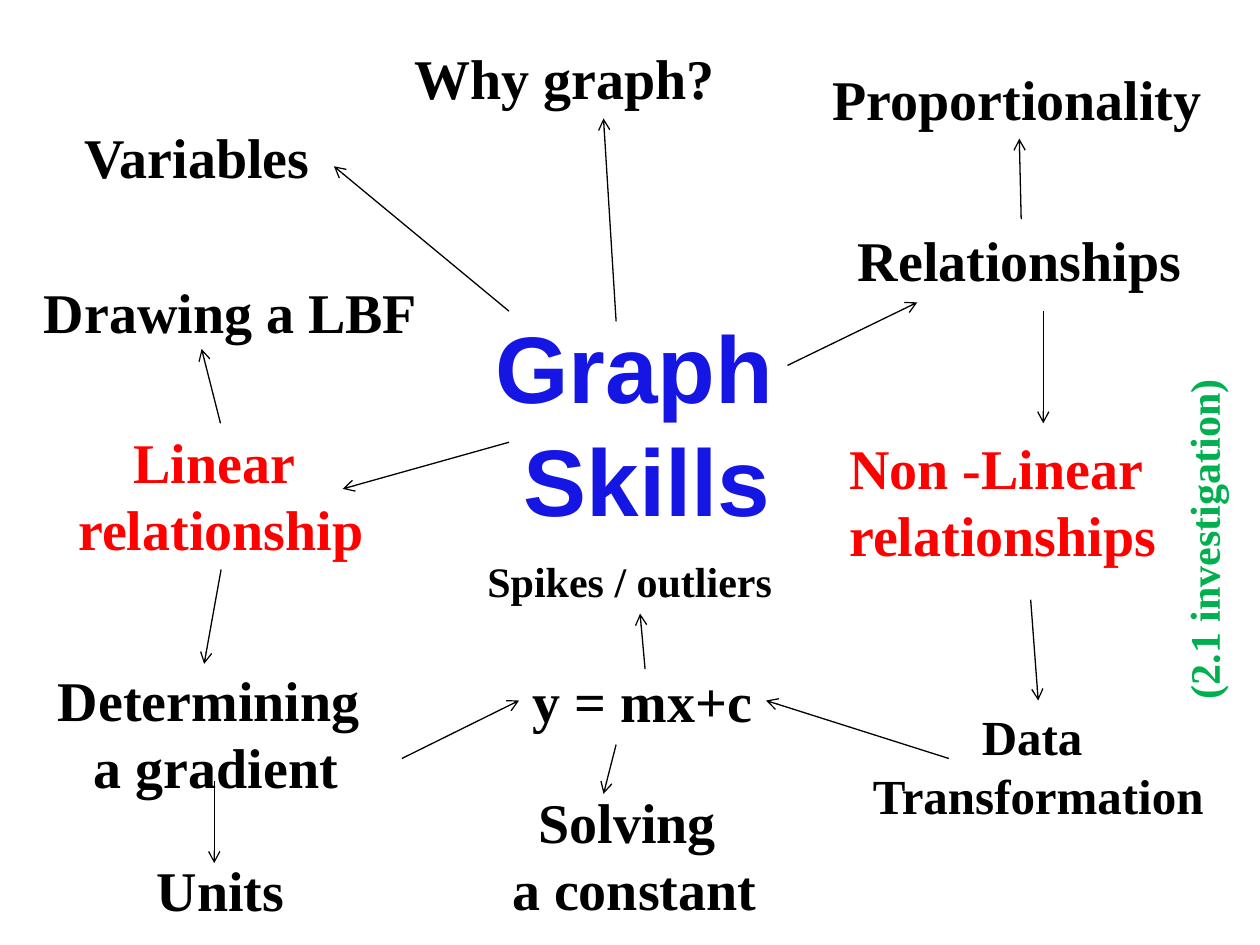
from pptx import Presentation
from pptx.dml.color import RGBColor
from pptx.enum import shapes, text
from pptx.oxml.ns import qn
from pptx.util import Inches, Pt
from lxml import etree

BLACK, RED, BLUE, GREEN = "000000", "FF0000", "1616E4", "00B050"
SERIF, SANS = "Times New Roman", "Arial"
LEFT, CENTER = text.PP_ALIGN.LEFT, text.PP_ALIGN.CENTER
TOP, LEFT_SIDE, BOTTOM, RIGHT_SIDE = range(4)


def color(hex_string):
    return RGBColor.from_string(hex_string)


prs = Presentation()
prs.slide_width, prs.slide_height = Inches(10), Inches(7.5)
slide = prs.slides.add_slide(prs.slide_layouts[6])

# Topics: key, lines, left, top, width, height, size, colour, font, alignment, rotation
topics = [
    ("why", ["Why graph?"], 3.19, 0.3, 2.61, 0.64, 32, BLACK, SERIF, LEFT, 0),
    ("drawing", ["Drawing a LBF"], 0.25, 2.15, 3.19, 0.64, 32, BLACK, SERIF, LEFT, 0),
    ("gradient", ["Determining ", "a gradient"], 0.35, 5.23, 2.73, 1.18, 32, BLACK, SERIF, CENTER, 0),
    ("linear", ["Linear ", "relationship"], 0.51, 3.34, 2.49, 1.18, 32, RED, SERIF, CENTER, 0),
    ("skills", ["Graph", " Skills"], 3.82, 2.4, 2.43, 1.92, 54, BLUE, SANS, CENTER, 0),
    ("variables", ["Variables"], 0.56, 0.92, 2.01, 0.64, 32, BLACK, SERIF, CENTER, 0),
    ("equation", ["y = mx+c"], 4.12, 5.24, 1.96, 0.64, 32, BLACK, SERIF, CENTER, 0),
    ("nonlinear", ["Non -Linear ", "relationships"], 6.63, 3.39, 2.66, 1.18, 32, RED, SERIF, CENTER, 0),
    ("data", ["Data ", "Transformation"], 6.81, 5.56, 2.86, 1.04, 28, BLACK, SERIF, CENTER, 0),
    ("constant", ["Solving ", "a constant"], 3.92, 6.2, 2.23, 1.18, 32, BLACK, SERIF, CENTER, 0),
    ("units", ["Units"], 1.14, 6.74, 1.22, 0.64, 32, BLACK, SERIF, CENTER, 0),
    ("proportionality", ["Proportionality"], 6.51, 0.46, 3.16, 0.64, 32, BLACK, SERIF, LEFT, 0),
    ("relationships", ["Relationships"], 6.71, 1.74, 2.79, 0.64, 32, BLACK, SERIF, LEFT, 0),
    ("outliers", ["Spikes / outliers"], 3.77, 4.36, 2.48, 0.5, 24, BLACK, SERIF, LEFT, 0),
    ("investigation", ["(2.1 investigation)"], 8.17, 4.03, 2.76, 0.5, 24, GREEN, SERIF, CENTER, 270),
]
topic_boxes = {}
for key, lines, left, top, width, height, size, ink, font, align, rotation in topics:
    topic = slide.shapes.add_textbox(Inches(left), Inches(top), Inches(width), Inches(height))
    topic.rotation = rotation
    frame = topic.text_frame
    frame.word_wrap = False
    frame.auto_size = text.MSO_AUTO_SIZE.SHAPE_TO_FIT_TEXT
    for i, line in enumerate(lines):
        paragraph = frame.add_paragraph() if i else frame.paragraphs[0]
        paragraph.alignment = align
        run = paragraph.add_run()
        run.text = line
        run.font.size, run.font.name, run.font.bold = Pt(size), font, True
        run.font.color.rgb = color(ink)
    topic_boxes[key] = topic

# Arrows: start, end, then the topic side each end is joined to, if any
arrows = [
    ((4.04, 2.47), (2.65, 1.32), None, None),
    ((8.18, 4.76), (8.23, 5.56), None, ("data", TOP)),
    ((3.19, 6.02), (4.12, 5.56), None, ("equation", LEFT_SIDE)),
    ((4.89, 2.55), (4.79, 0.94), None, None),
    ((8.28, 2.47), (8.28, 3.36), None, None),
    ((1.75, 4.52), (1.62, 5.27), ("linear", BOTTOM), None),
    ((4.04, 3.51), (2.72, 3.88), None, None),
    ((1.75, 3.36), (1.6, 2.77), None, None),
    ((7.53, 6.02), (6.08, 5.56), None, ("equation", RIGHT_SIDE)),
    ((4.89, 5.91), (4.79, 6.3), None, None),
    ((1.7, 6.2), (1.7, 6.85), None, None),
    ((6.25, 2.9), (7.28, 2.4), None, None),
    ((8.11, 1.74), (8.09, 1.1), ("relationships", TOP), ("proportionality", BOTTOM)),
    ((5.12, 5.31), (5.08, 4.87), None, None),
]
for start, end, start_join, end_join in arrows:
    arrow = slide.shapes.add_connector(
        shapes.MSO_CONNECTOR.STRAIGHT, *(Inches(v) for v in start + end))
    if start_join:
        arrow.begin_connect(topic_boxes[start_join[0]], start_join[1])
    if end_join:
        arrow.end_connect(topic_boxes[end_join[0]], end_join[1])
    arrow.line.width = Pt(0.75)
    arrow.line.color.rgb = color(BLACK)
    # Open arrowhead, no shadow
    etree.SubElement(arrow.line._get_or_add_ln(), qn("a:tailEnd"), type="arrow")
    etree.SubElement(arrow._element.spPr, qn("a:effectLst"))

prs.save("out.pptx")
